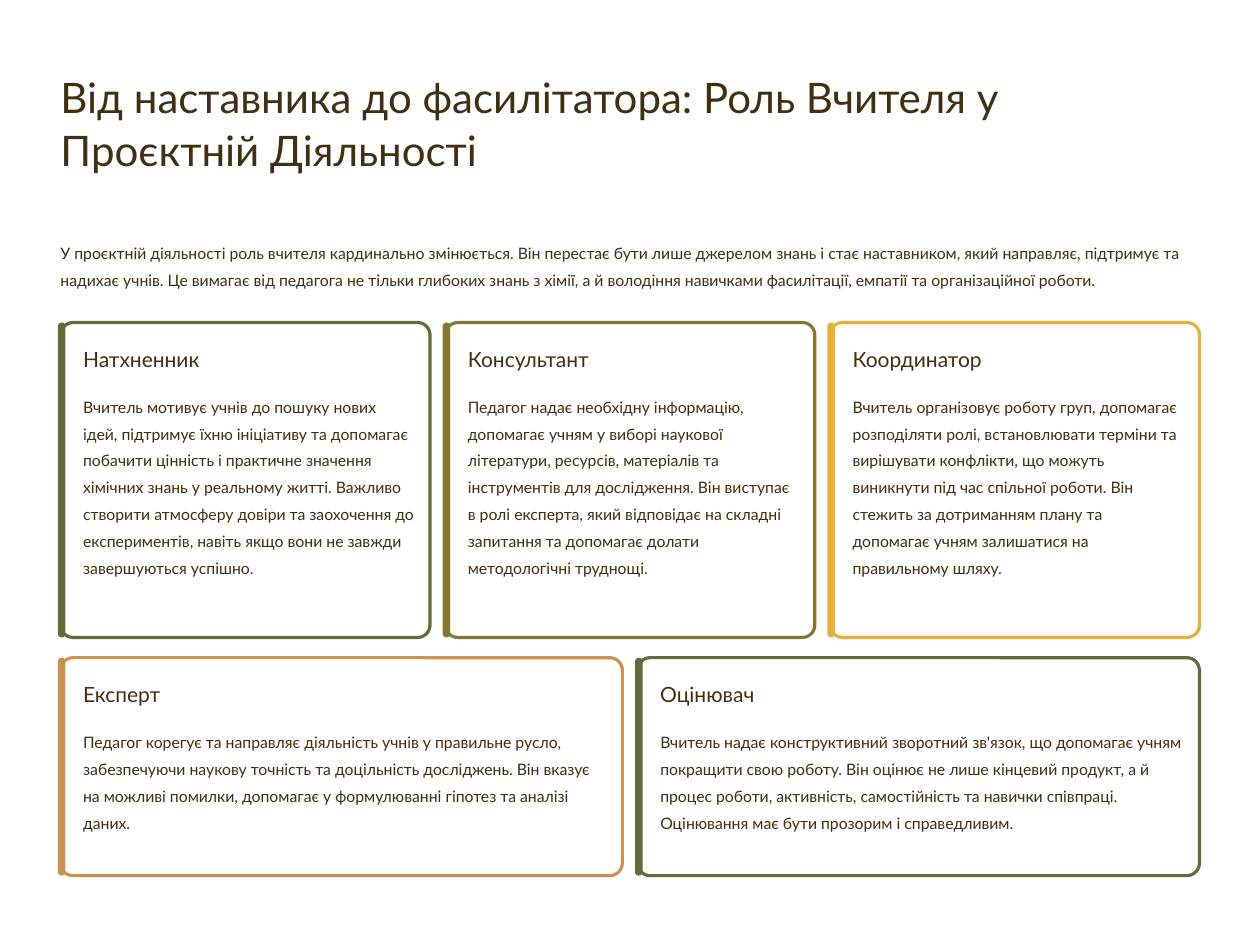
import pptx
import pptx.dml.color
import pptx.enum.shapes
import pptx.enum.text
import pptx.util

Inches = pptx.util.Inches
Pt = pptx.util.Pt
ROUNDED = pptx.enum.shapes.MSO_SHAPE.ROUNDED_RECTANGLE

INK = "403011"
LEFT, CONTENT_WIDTH, GAP = 0.48, 9.04, 0.12
CORNER_RADIUS = 0.1
BAR_WIDTH = 0.06

TITLE = {"size": 24, "spacing": 30.1}
HEADING = {"size": 12, "spacing": 15.1}
BODY = {"size": 9, "spacing": 15.4}

HEADLINE = "Від наставника до фасилітатора: Роль Вчителя у Проєктній Діяльності"
INTRO = (
    "У проєктній діяльності роль вчителя кардинально змінюється. Він перестає бути лише "
    "джерелом знань і стає наставником, який направляє, підтримує та надихає учнів. Це вимагає "
    "від педагога не тільки глибоких знань з хімії, а й володіння навичками фасилітації, емпатії "
    "та організаційної роботи."
)

# Each row: top, height, and its cards (heading, colour, description)
ROLE_ROWS = [
    (2.56, 2.5, [
        ("Натхненник", "626C3B",
         "Вчитель мотивує учнів до пошуку нових ідей, підтримує їхню ініціативу та допомагає "
         "побачити цінність і практичне значення хімічних знань у реальному житті. Важливо "
         "створити атмосферу довіри та заохочення до експериментів, навіть якщо вони не завжди "
         "завершуються успішно."),
        ("Консультант", "83792E",
         "Педагог надає необхідну інформацію, допомагає учням у виборі наукової літератури, "
         "ресурсів, матеріалів та інструментів для дослідження. Він виступає в ролі експерта, "
         "який відповідає на складні запитання та допомагає долати методологічні труднощі."),
        ("Координатор", "E8AF3B",
         "Вчитель організовує роботу груп, допомагає розподіляти ролі, встановлювати терміни та "
         "вирішувати конфлікти, що можуть виникнути під час спільної роботи. Він стежить за "
         "дотриманням плану та допомагає учням залишатися на правильному шляху."),
    ]),
    (5.22, 1.73, [
        ("Експерт", "CC914D",
         "Педагог корегує та направляє діяльність учнів у правильне русло, забезпечуючи наукову "
         "точність та доцільність досліджень. Він вказує на можливі помилки, допомагає у "
         "формулюванні гіпотез та аналізі даних."),
        ("Оцінювач", "626C3B",
         "Вчитель надає конструктивний зворотний зв'язок, що допомагає учням покращити свою "
         "роботу. Він оцінює не лише кінцевий продукт, а й процес роботи, активність, "
         "самостійність та навички співпраці. Оцінювання має бути прозорим і справедливим."),
    ]),
]


def color(hex_value):
    return pptx.dml.color.RGBColor.from_string(hex_value)


def add_text(slide, text, left, top, width, height, style, wrap=True):
    box = slide.shapes.add_textbox(Inches(left), Inches(top), Inches(width), Inches(height))
    frame = box.text_frame
    frame_format = {
        "margin_left": 0, "margin_top": 0, "margin_right": 0, "margin_bottom": 0,
        "word_wrap": wrap, "vertical_anchor": pptx.enum.text.MSO_ANCHOR.TOP,
    }
    for name, value in frame_format.items():
        setattr(frame, name, value)
    paragraph = frame.paragraphs[0]
    paragraph.line_spacing = Pt(style["spacing"])
    run = paragraph.add_run()
    run.text = text
    for name, value in {"size": Pt(style["size"]), "name": "Lato"}.items():
        setattr(run.font, name, value)
    run.font.color.rgb = color(INK)


def add_rounded(slide, left, top, width, height, adjustment):
    shape = slide.shapes.add_shape(
        ROUNDED, Inches(left), Inches(top), Inches(width), Inches(height))
    shape.shadow.inherit = False
    shape.adjustments[0] = adjustment
    return shape


def add_card(slide, left, top, width, height, heading, accent, description):
    """Outlined card with a solid accent bar along its left edge."""
    outline = add_rounded(slide, left, top, width, height, CORNER_RADIUS / min(width, height))
    outline.fill.background()
    outline.line.color.rgb = color(accent)
    outline.line.width = Pt(1.8)

    bar = add_rounded(slide, left - 0.02, top, BAR_WIDTH, height, 0.5)
    bar.fill.solid()
    bar.fill.fore_color.rgb = color(accent)
    bar.line.fill.background()

    text_left = left + 0.18
    add_text(slide, heading, text_left, top + 0.18, 1.5, 0.25, HEADING, wrap=False)
    add_text(slide, description, text_left, top + 0.53, width - 0.31, height - 0.71, BODY)


def add_card_row(slide, top, height, cards):
    width = (CONTENT_WIDTH - GAP * (len(cards) - 1)) / len(cards)
    for column, card in enumerate(cards):
        add_card(slide, LEFT + column * (width + GAP), top, width, height, *card)


def main():
    presentation = pptx.Presentation()
    presentation.slide_width = Inches(10)
    presentation.slide_height = Inches(7.5)
    slide = presentation.slides.add_slide(presentation.slide_layouts[6])
    slide.background.fill.solid()
    slide.background.fill.fore_color.rgb = color("FFFFFF")

    add_text(slide, HEADLINE, LEFT, 0.55, CONTENT_WIDTH, 1, TITLE)
    add_text(slide, INTRO, LEFT, 1.87, CONTENT_WIDTH, 0.51, BODY)
    for top, height, cards in ROLE_ROWS:
        add_card_row(slide, top, height, cards)

    presentation.save("out.pptx")


if __name__ == "__main__":
    main()
